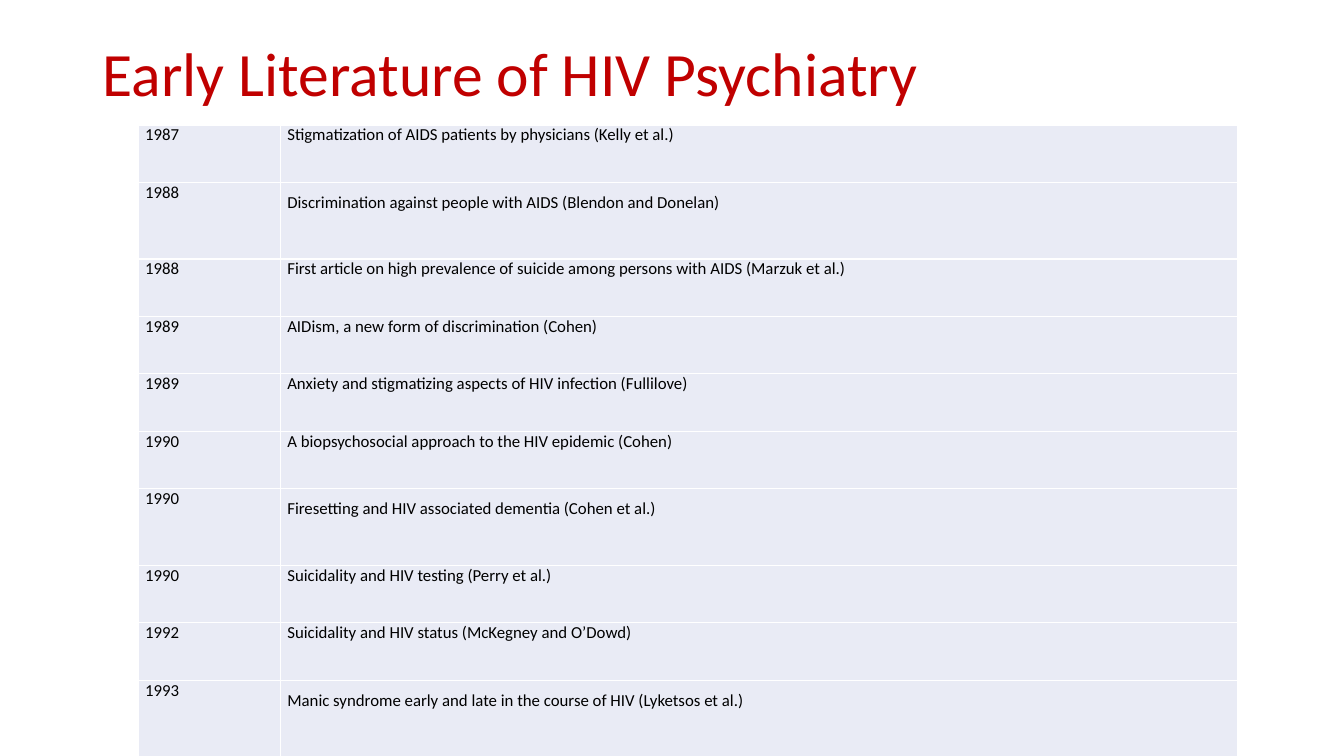
from lxml import etree
from pptx import Presentation
from pptx.dml.color import RGBColor
from pptx.enum import text
from pptx.oxml import ns
from pptx.util import Inches, Pt

RED = RGBColor(0xC0, 0x00, 0x00)
BLACK = RGBColor(0x00, 0x00, 0x00)
PALE = RGBColor(0xE9, 0xEB, 0xF5)
WHITE = RGBColor(0xFF, 0xFF, 0xFF)

# Year, finding, line spacing
PAPERS = [
    ("1987", "Stigmatization of AIDS patients by physicians (Kelly et al.)", 1),
    ("1988", "Discrimination against people with AIDS (Blendon and Donelan)", 1.5),
    ("1988", "First article on high prevalence of suicide among persons with AIDS (Marzuk et al.)", 1),
    ("1989", "AIDism, a new form of discrimination (Cohen)", 1),
    ("1989", "Anxiety and stigmatizing aspects of HIV infection (Fullilove)", 1),
    ("1990", "A biopsychosocial approach to the HIV epidemic (Cohen)", 1),
    ("1990", "Firesetting and HIV associated dementia (Cohen et al.)", 1.5),
    ("1990", "Suicidality and HIV testing (Perry et al.)", 1),
    ("1992", "Suicidality and HIV status (McKegney and O’Dowd)", 1),
    ("1993", "Manic syndrome early and late in the course of HIV (Lyketsos et al.)", 1.5),
]


class Page:
    face = "Calibri"

    def __init__(self, deck):
        self.slide = deck.slides.add_slide(deck.slide_layouts[5])

    def label(self, para, words, size, color, space):
        para.text = words
        para.line_spacing = space
        para.alignment = text.PP_ALIGN.LEFT
        font = para.font
        font.name, font.size, font.color.rgb = self.face, Pt(size), color

    def title(self, words, box):
        shape = self.slide.shapes.title
        shape.left, shape.top, shape.width, shape.height = map(Inches, box)
        frame = shape.text_frame
        frame.word_wrap = True
        frame.vertical_anchor = text.MSO_ANCHOR.MIDDLE
        self.label(frame.paragraphs[0], words, 44, RED, 0.9)

    def table(self, rows, left, top, widths):
        # Row height follows the line spacing of its text
        highs = [0.76 if space > 1 else 0.57 for _, _, space in rows]
        box = map(Inches, (left, top, sum(widths), sum(highs)))
        grid = self.slide.shapes.add_table(len(rows), len(widths), *box).table
        grid.first_row = grid.horz_banding = False
        for col, width in zip(grid.columns, widths):
            col.width = Inches(width)
        for row, high, (year, topic, space) in zip(grid.rows, highs, rows):
            row.height = Inches(high)
            self.cell(row.cells[0], year, 1)
            self.cell(row.cells[1], topic, space)

    def cell(self, cell, words, space):
        cell.margin_left = cell.margin_right = Inches(0.07)
        cell.margin_top = cell.margin_bottom = 0
        cell.vertical_anchor = text.MSO_ANCHOR.TOP
        self.label(cell.text_frame.paragraphs[0], words, 12, BLACK, space)
        cell.fill.solid()
        cell.fill.fore_color.rgb = PALE
        self.border(cell)

    def border(self, cell):
        # Border lines come before the fill in the cell properties
        props = cell._tc.get_or_add_tcPr()
        for spot, side in enumerate(("lnL", "lnR", "lnT", "lnB")):
            line = etree.Element(ns.qn("a:" + side), w=str(Pt(1)))
            fill = etree.SubElement(line, ns.qn("a:solidFill"))
            etree.SubElement(fill, ns.qn("a:srgbClr"), val=str(WHITE))
            props.insert(spot, line)


def main():
    deck = Presentation()
    deck.slide_width, deck.slide_height = Inches(13.33), Inches(7.5)
    page = Page(deck)
    # Heading
    page.title("Early Literature of HIV Psychiatry", (0.92, 0.28, 11.5, 0.96))
    # Timeline of papers
    page.table(PAPERS, 1.37, 1.24, (1.41, 9.49))
    deck.save("out.pptx")


if __name__ == "__main__":
    main()
